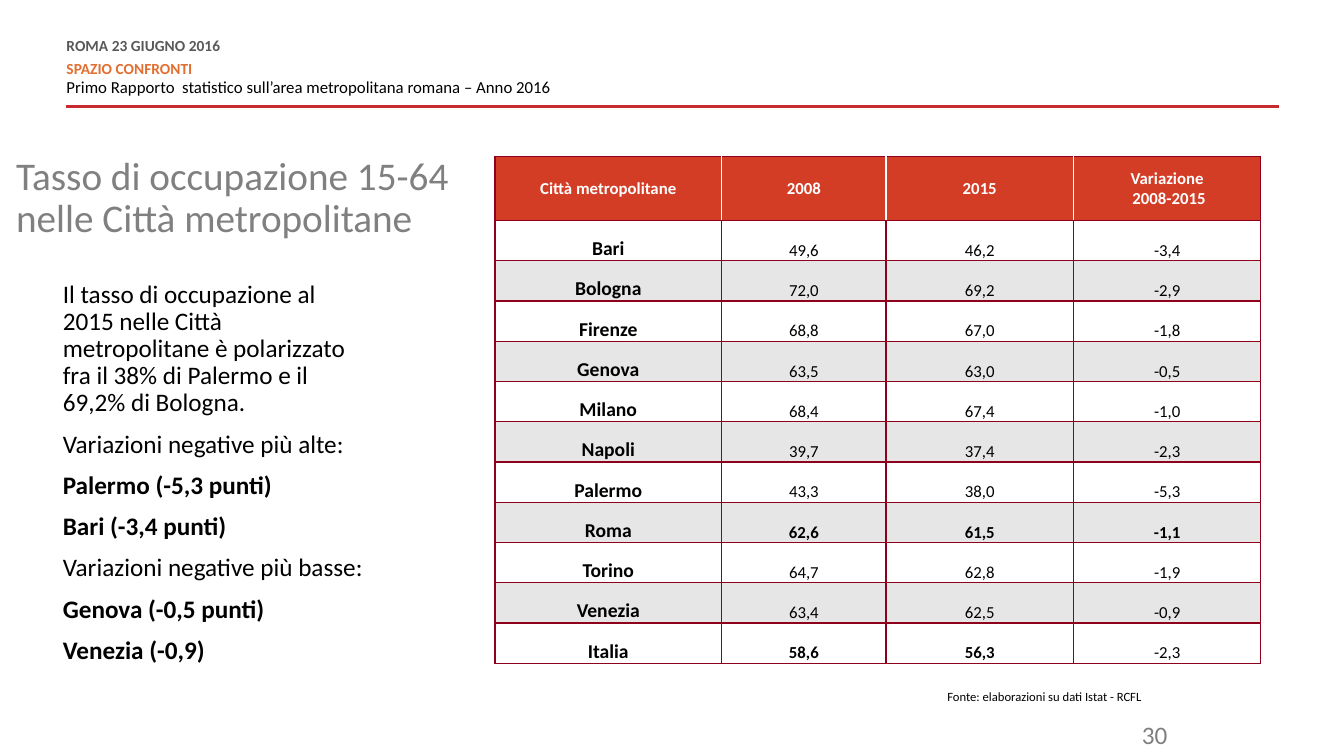
from dataclasses import dataclass

from lxml import etree
from pptx import Presentation
from pptx.dml.color import RGBColor
from pptx.enum.shapes import MSO_CONNECTOR
from pptx.enum.text import MSO_ANCHOR, MSO_AUTO_SIZE, PP_ALIGN
from pptx.oxml.ns import qn
from pptx.util import Pt

LEFT, MID, RIGHT = PP_ALIGN.LEFT, PP_ALIGN.CENTER, PP_ALIGN.RIGHT
TOP, CENTRE, LOW = MSO_ANCHOR.TOP, MSO_ANCHOR.MIDDLE, MSO_ANCHOR.BOTTOM
FIXED = MSO_AUTO_SIZE.NONE
STRAIGHT = MSO_CONNECTOR.STRAIGHT


@dataclass(frozen=True)
class Theme:
    font: str = "Calibri"
    ink: str = "000000"
    paper: str = "FFFFFF"
    band: str = "E7E6E6"
    head: str = "D43D25"
    grid: str = "8E001C"
    rule: str = "C72A31"
    date: str = "595959"
    topic: str = "E26F31"
    title: str = "808080"
    page: str = "7F7F7F"
    # Type sizes
    huge: float = 28
    big: float = 18
    name: float = 14
    base: float = 12
    small: float = 11
    tiny: float = 9


T = Theme()

HEADS = ["Città metropolitane", "2008", "2015", "Variazione\n 2008-2015"]
RATES = [
    ["Bari", "49,6", "46,2", "-3,4"],
    ["Bologna", "72,0", "69,2", "-2,9"],
    ["Firenze", "68,8", "67,0", "-1,8"],
    ["Genova", "63,5", "63,0", "-0,5"],
    ["Milano", "68,4", "67,4", "-1,0"],
    ["Napoli", "39,7", "37,4", "-2,3"],
    ["Palermo", "43,3", "38,0", "-5,3"],
    ["Roma", "62,6", "61,5", "-1,1"],
    ["Torino", "64,7", "62,8", "-1,9"],
    ["Venezia", "63,4", "62,5", "-0,9"],
    ["Italia", "58,6", "56,3", "-2,3"],
]
# Number of leading cells in bold; other rows have just the name
BOLD = {"Roma": 4, "Italia": 3}
COLS = [162, 117.4, 133.9, 133.9]
HEAD_H, ROW_H = 46, 28.75

NOTES = [
    ("Il tasso di occupazione al 2015 nelle Città metropolitane è "
     "polarizzato fra il 38% di Palermo e il 69,2% di Bologna.", False),
    ("Variazioni negative più alte:", False),
    ("Palermo (-5,3 punti)", True),
    ("Bari (-3,4 punti)", True),
    ("Variazioni negative più basse:", False),
    ("Genova (-0,5 punti)", True),
    ("Venezia (-0,9)", True),
]


def rgb(code):
    return RGBColor.from_string(code)


def style(para, size, color, bold=False, align=LEFT):
    para.alignment = align
    for run in para.runs:
        font = run.font
        font.name, font.size, font.bold = T.font, Pt(size), bold
        font.color.rgb = rgb(color)


def inset(frame, side=0, top=0):
    frame.margin_left = frame.margin_right = Pt(side)
    frame.margin_top = frame.margin_bottom = Pt(top)


def add_box(slide, left, top, width, height, text, side=0, upper=0):
    box = slide.shapes.add_textbox(Pt(left), Pt(top), Pt(width), Pt(height))
    frame = box.text_frame
    frame.word_wrap = True
    inset(frame, side, upper)
    frame.text = text
    return frame.paragraphs


def add_rule(slide, left, right, top):
    line = slide.shapes.add_connector(
        STRAIGHT, Pt(right), Pt(top), Pt(left), Pt(top))
    line.line.color.rgb, line.line.width = rgb(T.rule), Pt(2)
    etree.SubElement(line._element.spPr, qn("a:effectLst"))


def add_band(slide):
    add_rule(slide, 47.5, 913.7, 76.3)
    paras = add_box(
        slide, 47.5, 28, 374.4, 42.5,
        "ROMA 23 GIUGNO 2016\nSPAZIO CONFRONTI\n"
        "Primo Rapporto  statistico sull’area metropolitana romana – Anno 2016")
    looks = [(T.small, T.date, True, 0, 6),
             (T.small, T.topic, True, 0, 0),
             (T.base, T.ink, False, 3, 6)]
    for para, (size, color, bold, before, after) in zip(paras, looks):
        style(para, size, color, bold)
        para.line_spacing = Pt(10.8)
        para.space_before, para.space_after = Pt(before), Pt(after)


def set_title(slide, text):
    title = slide.shapes.title
    title.left, title.top = Pt(11.5), Pt(111.6)
    title.width, title.height = Pt(329.8), Pt(82)
    frame = title.text_frame
    frame.text = text
    frame.word_wrap, frame.auto_size = True, FIXED
    frame.vertical_anchor = TOP
    inset(frame)
    para = frame.paragraphs[0]
    style(para, T.huge, T.title)
    para.line_spacing = 0.9


def add_notes(slide):
    text = "\n".join(line for line, _ in NOTES)
    paras = add_box(slide, 44.9, 200.9, 218.9, 308.9, text)
    for i, (para, (_, bold)) in enumerate(zip(paras, NOTES)):
        style(para, T.big, T.ink, bold)
        para.line_spacing = 0.9
        para.space_before = Pt(10 if i else 0)


def set_edges(cell, colors):
    props = cell._tc.get_or_add_tcPr()
    for side, color in zip("LRTB", colors):
        edge = etree.SubElement(props, qn(f"a:ln{side}"), w=str(Pt(1)))
        fill = etree.SubElement(edge, qn("a:solidFill"))
        etree.SubElement(fill, qn("a:srgbClr"), val=color)


def set_cell(cell, text, size, color, bold, fill, anchor, edges):
    set_edges(cell, edges)
    cell.fill.solid()
    cell.fill.fore_color.rgb = rgb(fill)
    cell.vertical_anchor = anchor
    cell.margin_left = cell.margin_right = cell.margin_top = Pt(0.7)
    cell.margin_bottom = 0
    cell.text_frame.text = text
    for para in cell.text_frame.paragraphs:
        style(para, size, color, bold, MID)


def add_rates(slide):
    height = HEAD_H + ROW_H * len(RATES)
    table = slide.shapes.add_table(
        len(RATES) + 1, len(COLS), Pt(353.5), Pt(111.6),
        Pt(sum(COLS)), Pt(height)).table
    for col, width in zip(table.columns, COLS):
        col.width = Pt(width)
    for i, row in enumerate(table.rows):
        row.height = Pt(ROW_H if i else HEAD_H)
    # Header row: white lines between the columns
    last = len(COLS) - 1
    for c, text in enumerate(HEADS):
        edges = [T.paper if c else T.grid, T.paper if c < last else T.grid,
                 T.grid, T.grid]
        set_cell(table.cell(0, c), text, T.base, T.paper, True,
                 T.head, CENTRE, edges)
    # City rows in alternate bands
    for r, rates in enumerate(RATES, 1):
        fill = T.paper if r % 2 else T.band
        for c, text in enumerate(rates):
            size = T.base if c else T.name
            bold = c < BOLD.get(rates[0], 1)
            set_cell(table.cell(r, c), text, size, T.ink, bold,
                     fill, LOW, [T.grid] * 4)


def add_label(slide, left, top, width, height, text, size, color, align):
    paras = add_box(slide, left, top, width, height, text, 7.2, 3.6)
    style(paras[0], size, color, align=align)


def main():
    deck = Presentation()
    deck.slide_width, deck.slide_height = Pt(960), Pt(540)
    slide = deck.slides.add_slide(deck.slide_layouts[5])
    add_band(slide)
    set_title(slide, "Tasso di occupazione 15-64 nelle Città metropolitane")
    add_notes(slide)
    add_rates(slide)
    # Source and page number
    add_label(slide, 669.6, 488.2, 207.4, 18,
              "Fonte: elaborazioni su dati Istat - RCFL", T.tiny, T.ink, LEFT)
    add_label(slide, 756, 510.5, 85, 25.2, "30", T.big, T.page, RIGHT)
    deck.save("out.pptx")


if __name__ == "__main__":
    main()
